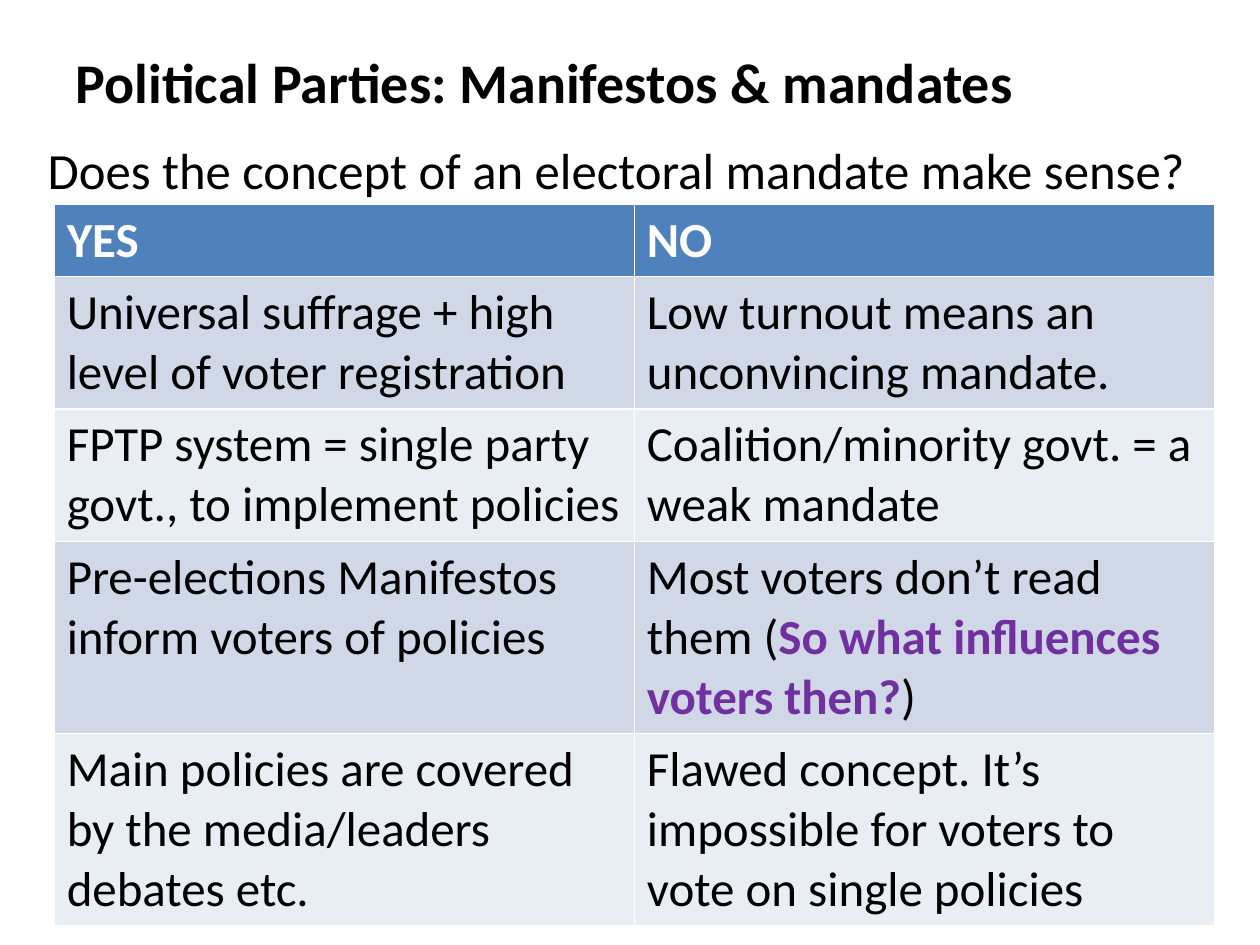
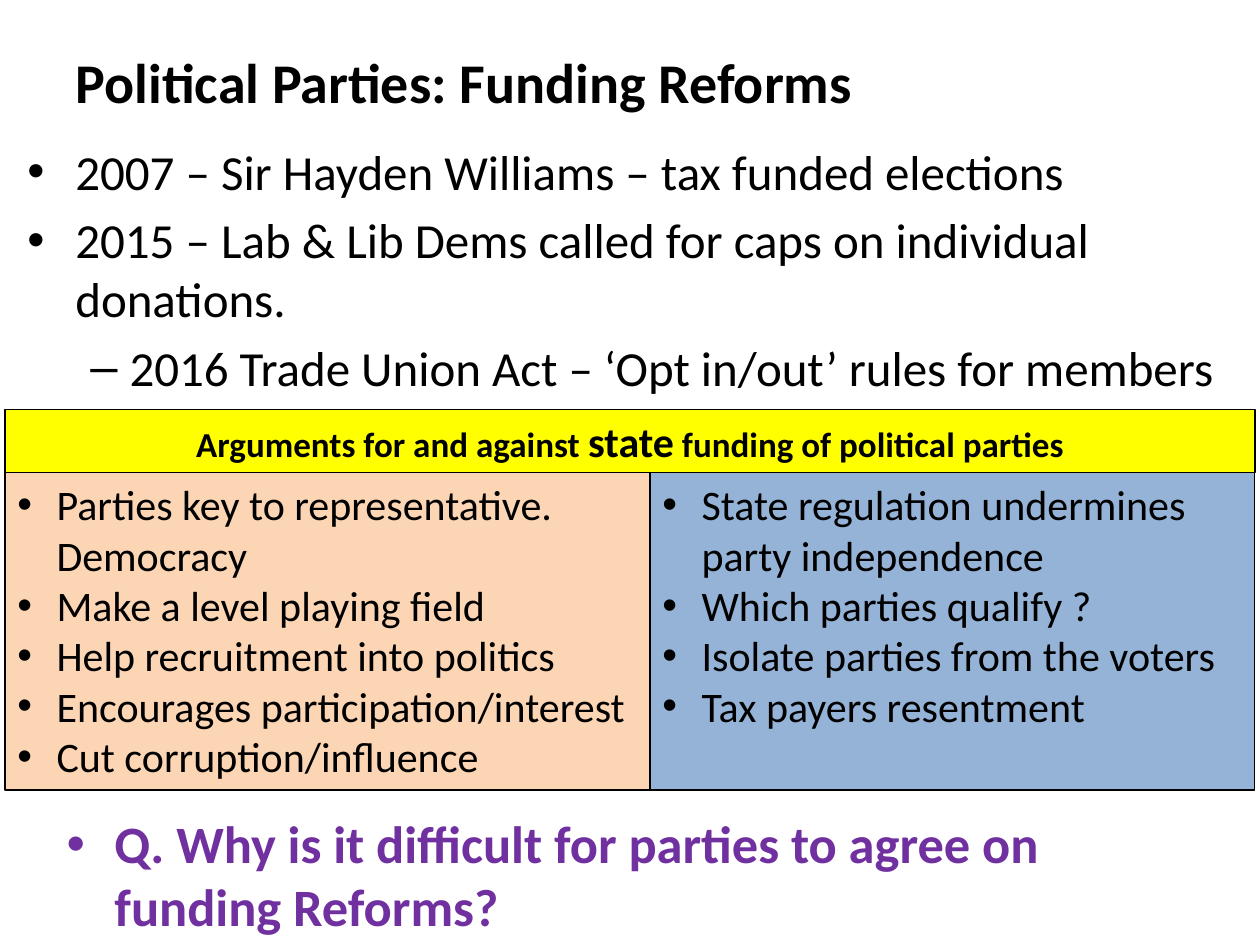
import pptx
import pptx.util
import pptx.dml.color
import pptx.enum.shapes
import pptx.enum.text
import pptx.oxml.ns
import lxml.etree

Inches = pptx.util.Inches
Pt = pptx.util.Pt
ALIGN = pptx.enum.text.PP_ALIGN
ANCHOR = pptx.enum.text.MSO_ANCHOR

BLACK, WHITE, PURPLE = "000000", "FFFFFF", "7030A0"
BLUE, BANDS = "4F81BD", ("D0D8E8", "E9EDF4")
YELLOW, PEACH, SKY = "FFFF00", "FCD5B5", "95B3D7"


def color(text):
    return pptx.dml.color.RGBColor.from_string(text)


def paint(item, shade):
    item.fill.solid()
    item.fill.fore_color.rgb = color(shade)


def bullet(para, mark, left, hang):
    props = para._p.get_or_add_pPr()
    props.set("marL", str(Inches(left)))
    props.set("indent", str(-Inches(hang)))
    for tag, key, value in (("a:buFont", "typeface", "Arial"), ("a:buChar", "char", mark)):
        node = lxml.etree.SubElement(props, pptx.oxml.ns.qn(tag))
        node.set(key, value)


class Deck:
    font = "Calibri"

    def __init__(self):
        self.show = pptx.Presentation()
        self.show.slide_width, self.show.slide_height = Inches(10), Inches(7.5)
        self.slide = None

    def page(self, title):
        self.slide = self.show.slides.add_slide(self.show.slide_layouts[5])
        shape = self.slide.shapes.title
        shape.left, shape.top = Inches(0.5), Inches(0.3)
        shape.width, shape.height = Inches(9), Inches(0.69)
        shape.text_frame.vertical_anchor = ANCHOR.MIDDLE
        self.fill(shape.text_frame, [title], 32, bold=True)

    def run(self, para, text, size, shade=BLACK, bold=False):
        run = para.add_run()
        run.text = text
        run.font.name = self.font
        run.font.size = Pt(size)
        run.font.bold = bold
        run.font.color.rgb = color(shade)

    def fill(self, frame, lines, size, shade=BLACK, bold=False,
             align=ALIGN.LEFT, gap=0, marks=()):
        frame.word_wrap = True
        for i, line in enumerate(lines):
            para = frame.paragraphs[0] if i == 0 else frame.add_paragraph()
            para.alignment = align
            para.space_before = Pt(gap)
            if marks:
                bullet(para, *marks[i])
            parts = [(line, {})] if isinstance(line, str) else line
            for text, style in parts:
                look = {"size": size, "shade": shade, "bold": bold, **style}
                self.run(para, text, **look)

    def text(self, box, lines, size, **style):
        shape = self.slide.shapes.add_textbox(*map(Inches, box))
        self.fill(shape.text_frame, lines, size, **style)

    def panel(self, box, back, lines, size, **style):
        kind = pptx.enum.shapes.MSO_SHAPE.RECTANGLE
        shape = self.slide.shapes.add_shape(kind, *map(Inches, box))
        shape.shadow.inherit = False
        paint(shape, back)
        shape.line.color.rgb = color(BLACK)
        shape.line.width = Pt(0.75)
        shape.text_frame.vertical_anchor = ANCHOR.TOP
        self.fill(shape.text_frame, lines, size, **style)

    def table(self, box, rows, highs, size):
        frame = self.slide.shapes.add_table(len(rows), len(rows[0]), *map(Inches, box))
        grid = frame.table
        for i, row in enumerate(rows):
            grid.rows[i].height = Inches(highs[i])
            head = i == 0
            for j, line in enumerate(row):
                cell = grid.cell(i, j)
                paint(cell, BLUE if head else BANDS[(i - 1) % 2])
                self.fill(cell.text_frame, [line], size,
                          shade=WHITE if head else BLACK, bold=head)


def mandates(deck):
    deck.page("Political Parties: Manifestos & mandates")
    rows = [
        ("YES", "NO"),
        ("Universal suffrage + high level of voter registration",
         "Low turnout means an unconvincing mandate."),
        ("FPTP system = single party govt., to implement policies",
         "Coalition/minority govt. = a weak mandate"),
        ("Pre-elections Manifestos inform voters of policies",
         [("Most voters don’t read them (", {}),
          ("So what influences voters then?", {"shade": PURPLE, "bold": True}),
          (")", {})]),
        ("Main policies are covered by the media/leaders debates etc.",
         "Flawed concept. It’s impossible for voters to vote on single policies"),
    ]
    highs = [0.57, 1.05, 1.05, 1.52, 1.52]
    deck.table((0.43, 1.62, 9.21, sum(highs)), rows, highs, 28)
    deck.text((0.28, 1.05, 9.37, 0.59),
              ["Does the concept of an electoral mandate make sense?"], 29)


def funding(deck):
    deck.page("Political Parties: Funding Reforms")
    dot, dash, small = ("•", 0.38, 0.38), ("–", 0.81, 0.31), ("•", 0.31, 0.31)
    deck.text((0.12, 1.07, 9.76, 2.18), [
        "2007 – Sir Hayden Williams – tax funded elections",
        "2015 – Lab & Lib Dems called for caps on individual donations.",
        "2016 Trade Union Act – ‘Opt in/out’ rules for members",
    ], 28, gap=5.6, marks=[dot, dot, dash])

    left, top, wide, split = 0.04, 3.75, 9.92, 5.12
    pros = [
        "Parties key to representative. Democracy",
        "Make a level playing field",
        "Help recruitment into politics",
        "Encourages participation/interest",
        "Cut corruption/influence",
    ]
    cons = [
        "State regulation undermines party independence",
        "Which parties qualify ?",
        "Isolate parties from the voters",
        "Tax payers resentment",
    ]
    sides = ((left, split, PEACH, pros), (left + split, wide - split, SKY, cons))
    for x, width, back, lines in sides:
        deck.panel((x, top, width, 2.52), back, lines, 24, marks=[small] * len(lines))
    deck.panel((left, top - 0.5, wide, 0.5), YELLOW, [[
        ("Arguments for and against ", {}),
        ("state", {"size": 24}),
        (" funding of political parties", {}),
    ]], 20, bold=True, align=ALIGN.CENTER)

    deck.text((0.43, 6.39, 9.29, 1.11),
              ["Q. Why is it difficult for parties to agree on funding Reforms?"],
              30, shade=PURPLE, bold=True, gap=6, marks=[dot])


def main():
    deck = Deck()
    mandates(deck)
    funding(deck)
    deck.show.save("out.pptx")


if __name__ == "__main__":
    main()
